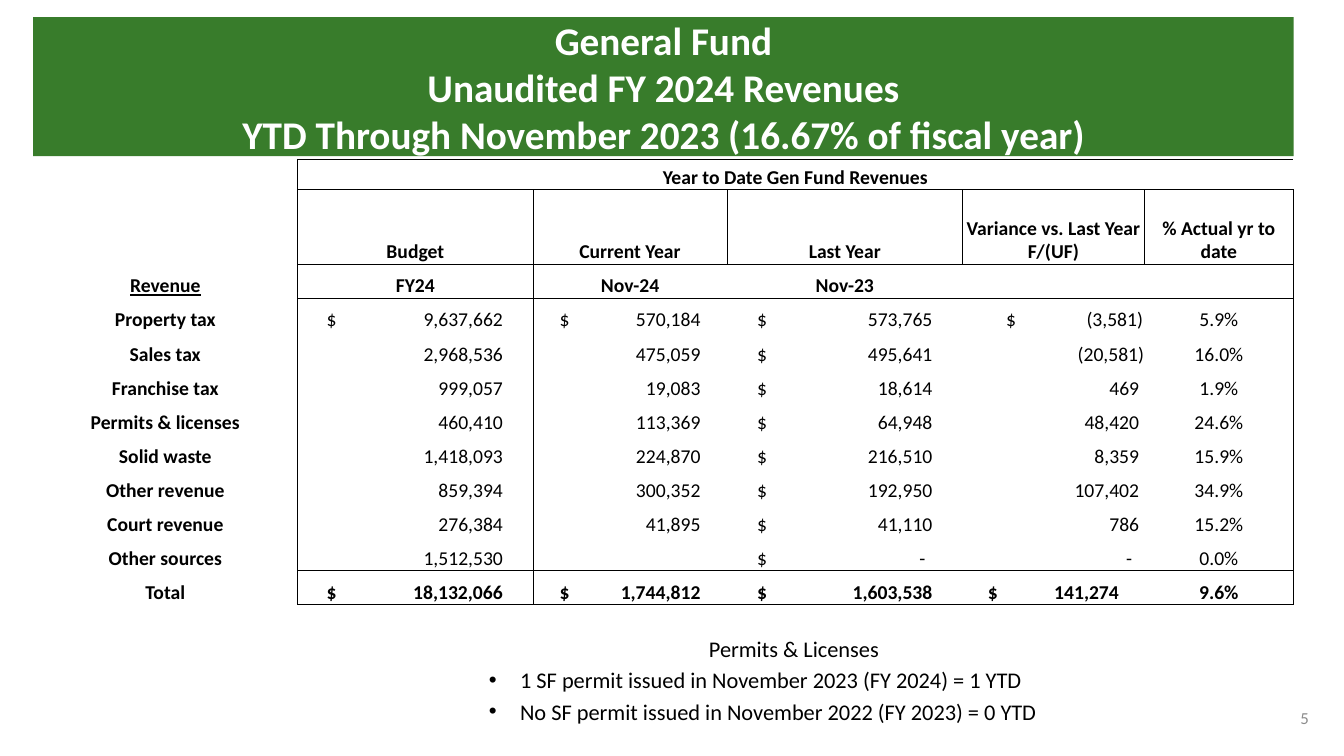
from lxml.etree import SubElement
from pptx import Presentation
from pptx.dml.color import RGBColor
from pptx.enum.shapes import MSO_SHAPE
from pptx.enum.text import MSO_ANCHOR, PP_ALIGN
from pptx.oxml.ns import qn
from pptx.util import Inches, Pt

GREEN = RGBColor(0x38, 0x7C, 0x2B)
WHITE = RGBColor(0xFF, 0xFF, 0xFF)
BLACK = RGBColor(0, 0, 0)
GRAY = RGBColor(0x8C, 0x8C, 0x8C)
NO_GRID_STYLE = "{2D5ABB26-0587-4C30-8999-92F81FD0307C}"

# Boxes: left, top, width, height in inches
TITLE_BOX = (0.33, 0.17, 12.5, 1.38)
TABLE_BOX = (0.33, 1.58, 12.5, 4.42)
NOTES_BOX = (4.25, 6.25, 7.25, 1.02)
NUMBER_BOX = (10.75, 6.92, 2.33, 0.4)

TITLE = ("General Fund\vUnaudited FY 2024 Revenues\v"
         "YTD Through November 2023 (16.67% of fiscal year)")
NOTES_HEADING = "Permits & Licenses"
NOTES = ["1 SF permit issued in November 2023 (FY 2024) = 1 YTD",
         "No SF permit issued in November 2022 (FY 2023) = 0 YTD"]

COLUMN_WIDTHS = [2.62, 2.34, 1.92, 2.34, 1.8, 1.48]
HEADER_HEIGHTS = [0.3, 0.74]
REVENUES = [
    ["", "Year to Date Gen Fund Revenues", "", "", "", ""],
    ["", "Budget", "Current Year", "Last Year",
     "Variance vs. Last Year F/(UF)", "% Actual yr to date"],
    ["Revenue", "FY24", "Nov-24", "Nov-23", "", ""],
    ["Property tax", "$\t9,637,662", "$\t570,184", "$\t573,765", "$\t(3,581)", "5.9%"],
    ["Sales tax", "2,968,536", "475,059", "$\t495,641", "(20,581)", "16.0%"],
    ["Franchise tax", "999,057", "19,083", "$\t18,614", "469", "1.9%"],
    ["Permits & licenses", "460,410", "113,369", "$\t64,948", "48,420", "24.6%"],
    ["Solid waste", "1,418,093", "224,870", "$\t216,510", "8,359", "15.9%"],
    ["Other revenue", "859,394", "300,352", "$\t192,950", "107,402", "34.9%"],
    ["Court revenue", "276,384", "41,895", "$\t41,110", "786", "15.2%"],
    ["Other sources", "1,512,530", "", "$\t-", "-", "0.0%"],
    ["Total", "$\t18,132,066", "$\t1,744,812", "$\t1,603,538", "$\t141,274", "9.6%"],
]
LABEL_ROW, FIRST_AMOUNT_ROW, TOTAL_ROW = 2, 3, len(REVENUES) - 1
LAST_COLUMN = len(COLUMN_WIDTHS) - 1
# Left inset of the dollar sign and right inset of the number, by column
AMOUNT_INSETS = {1: (0.29, 0.3), 2: (0.26, 0.26), 3: (0.3, 0.3), 4: (0.43, 0.05)}
TOTAL_VARIANCE_INSETS = (0.25, 0.25)


def set_font(font, size, color, **formats):
    font.color.rgb = color
    for name, value in {"name": "Calibri", "size": Pt(size), **formats}.items():
        setattr(font, name, value)


def set_margins(target, left=0, right=0):
    for side, value in {"left": left, "right": right, "top": 0, "bottom": 0}.items():
        setattr(target, f"margin_{side}", Inches(value))


def add_text(para, text, size, color, **formats):
    for span_text in [text]:
        para.text = span_text
    for span in para.runs:
        set_font(span.font, size, color, **formats)


def add_title(slide, box):
    banner = slide.shapes.add_shape(MSO_SHAPE.RECTANGLE, *map(Inches, box))
    banner.shadow.inherit = False
    banner.fill.solid()
    banner.fill.fore_color.rgb = GREEN
    banner.line.fill.background()
    frame = banner.text_frame
    frame.word_wrap = True
    frame.vertical_anchor = MSO_ANCHOR.MIDDLE
    set_margins(frame)
    para = frame.paragraphs[0]
    para.alignment = PP_ALIGN.CENTER
    add_text(para, TITLE, 28, WHITE, bold=True)


def border_sides(row, column):
    """Ruled header cells, an outline round the amounts, and a ruled total."""
    if column == 0:
        return "R"
    outline = {1: "L", LAST_COLUMN: "R"}.get(column, "")
    if row == 1:
        return "LRTB"
    if row in (0, TOTAL_ROW):
        return outline + "TB"
    return outline + {LABEL_ROW: "T", TOTAL_ROW - 1: "B"}.get(row, "")


def add_borders(cell, sides):
    properties = cell._tc.get_or_add_tcPr()
    for side in "LRTB":
        if side in sides:
            line = SubElement(properties, qn(f"a:ln{side}"), w=str(Pt(0.5)))
            fill = SubElement(line, qn("a:solidFill"))
            SubElement(fill, qn("a:srgbClr"), val=str(BLACK))


def align_amount(cell, para, text, row, column):
    """Put the dollar sign left and the number right, as in a ledger."""
    left, right = AMOUNT_INSETS[column]
    if row == TOTAL_ROW and column == 4:
        left, right = TOTAL_VARIANCE_INSETS
    if text.endswith(")"):
        right -= 0.05
    elif text.endswith("-"):
        right += 0.07
    if "\t" not in text:
        para.alignment = PP_ALIGN.RIGHT
        set_margins(cell, right=right)
        return
    para.alignment = PP_ALIGN.LEFT
    set_margins(cell, left=left)
    tabs = SubElement(para._p.get_or_add_pPr(), qn("a:tabLst"))
    position = Inches(COLUMN_WIDTHS[column] - left - max(right, 0.01))
    SubElement(tabs, qn("a:tab"), pos=str(position), algn="r")


def fill_cell(cell, text, row, column):
    add_borders(cell, border_sides(row, column))
    cell.fill.background()
    cell.vertical_anchor = MSO_ANCHOR.BOTTOM
    set_margins(cell)
    para = cell.text_frame.paragraphs[0]
    para.alignment = PP_ALIGN.CENTER
    if not text:
        para._p.get_or_add_endParaRPr().set("sz", "1400")
        return
    if row >= FIRST_AMOUNT_ROW and column in AMOUNT_INSETS:
        align_amount(cell, para, text, row, column)
    bold = column == 0 or row < FIRST_AMOUNT_ROW or row == TOTAL_ROW
    add_text(para, text, 14, BLACK, bold=bold, underline=text == "Revenue")


def add_revenue_table(slide, box):
    frame = slide.shapes.add_table(len(REVENUES), len(COLUMN_WIDTHS), *map(Inches, box))
    table = frame.table
    table.first_row = table.horz_banding = False
    table._tbl.tblPr.find(qn("a:tableStyleId")).text = NO_GRID_STYLE
    for column, width in zip(table.columns, COLUMN_WIDTHS):
        column.width = Inches(width)
    body_rows = len(REVENUES) - len(HEADER_HEIGHTS)
    body_height = (box[3] - sum(HEADER_HEIGHTS)) / body_rows
    for row, height in zip(table.rows, HEADER_HEIGHTS + [body_height] * body_rows):
        row.height = Inches(height)
    for row, texts in enumerate(REVENUES):
        for column, text in enumerate(texts):
            fill_cell(table.cell(row, column), text, row, column)
    table.cell(0, 1).merge(table.cell(0, LAST_COLUMN))


def add_notes(slide, box):
    frame = slide.shapes.add_textbox(*map(Inches, box)).text_frame
    frame.word_wrap = True
    heading = frame.paragraphs[0]
    heading.alignment = PP_ALIGN.CENTER
    add_text(heading, NOTES_HEADING, 16, BLACK)
    for note in NOTES:
        para = frame.add_paragraph()
        para.alignment = PP_ALIGN.JUSTIFY
        para.level = 1
        para.space_before = Pt(3.2)
        properties = para._p.get_or_add_pPr()
        properties.set("marL", str(Inches(0.81)))
        properties.set("indent", str(Inches(-0.31)))
        SubElement(properties, qn("a:buFont"), typeface="Arial")
        SubElement(properties, qn("a:buChar"), char="•")
        add_text(para, note, 16, BLACK)


def add_page_number(slide, box):
    frame = slide.shapes.add_textbox(*map(Inches, box)).text_frame
    frame.word_wrap = True
    frame.vertical_anchor = MSO_ANCHOR.MIDDLE
    para = frame.paragraphs[0]
    para.alignment = PP_ALIGN.RIGHT
    add_text(para, "5", 12, GRAY)


def main():
    deck = Presentation()
    deck.slide_width, deck.slide_height = Inches(13.33), Inches(7.5)
    slide = deck.slides.add_slide(deck.slide_layouts[6])
    add_title(slide, TITLE_BOX)
    add_page_number(slide, NUMBER_BOX)
    add_notes(slide, NOTES_BOX)
    add_revenue_table(slide, TABLE_BOX)
    deck.save("out.pptx")


if __name__ == "__main__":
    main()
